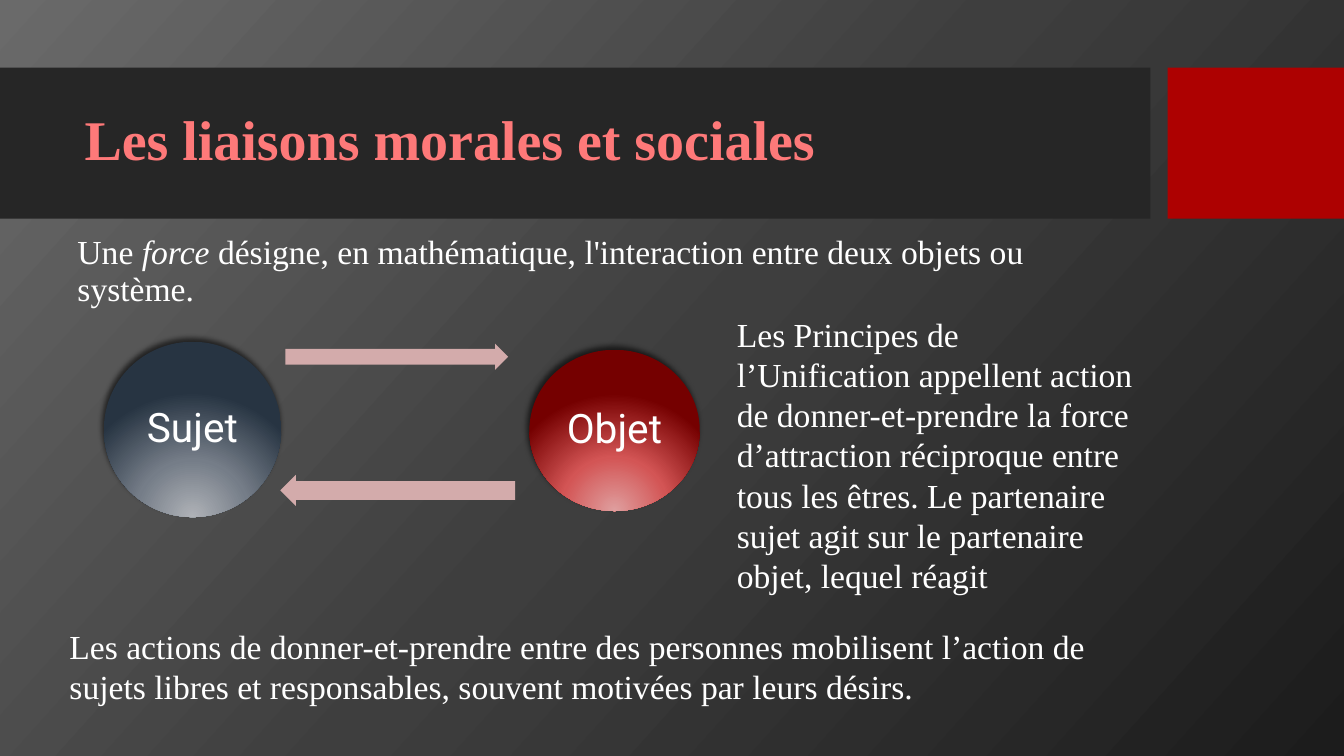
from lxml import etree
from pptx import Presentation
from pptx import util as u
from pptx.dml.color import RGBColor
from pptx.enum import shapes, text
from pptx.oxml import parse_xml
from pptx.oxml.ns import nsdecls, qn

SERIF = "Times New Roman"
SANS = "Roboto"
WHITE = "FFFFFF"
DIAGONAL = '<a:lin ang="2520000" scaled="0"/>'
GLOW_FROM_BELOW = ('<a:path path="circle"><a:fillToRect l="50000" t="155000" '
                   'r="50000" b="-55000"/></a:path>')


def color(value):
    return RGBColor.from_string(value)


def set_gradient(parent, stops, direction):
    """Replace the solid fill inside parent by a gradient of (percent, colour) stops."""
    marks = "".join(f'<a:gs pos="{place * 1000}"><a:srgbClr val="{value}"/></a:gs>'
                    for place, value in stops)
    gradient = parse_xml(f'<a:gradFill {nsdecls("a")} rotWithShape="1">'
                         f'<a:gsLst>{marks}</a:gsLst>{direction}</a:gradFill>')
    parent.replace(parent.find(qn("a:solidFill")), gradient)


class SlideBuilder:
    def __init__(self, page):
        self.page = page

    def background(self, stops):
        self.page.background.fill.solid()
        set_gradient(self.page.element.xpath("p:cSld/p:bg/p:bgPr")[0], stops, DIAGONAL)

    def shape(self, kind, left, top, width, height, fill):
        box = self.page.shapes.add_shape(
            kind, *map(u.Inches, (left, top, width, height)))
        box.shadow.inherit = False
        box.fill.solid()
        box.fill.fore_color.rgb = color(fill)
        box.line.fill.background()
        return box

    def arrow(self, left, top, width, height, rotation=0):
        arrow = self.shape(shapes.MSO_SHAPE.RIGHT_ARROW, left, top, width, height, "D3ABAB")
        arrow.adjustments[0] = 0.6
        arrow.adjustments[1] = 0.5
        arrow.rotation = rotation

    def ball(self, label, left, top, width, height, colors):
        """Shaded circle with a soft shadow and a centred label."""
        ball = self.shape(shapes.MSO_SHAPE.OVAL, left, top, width, height, colors[-1])
        properties = ball.element.spPr
        set_gradient(properties, zip((0, 46, 100), colors), GLOW_FROM_BELOW)
        shadow = etree.SubElement(properties.find(qn("a:effectLst")), qn("a:outerShdw"),
                                  blurRad=str(u.Pt(4)), dist=str(u.Pt(3)),
                                  dir="14700000", rotWithShape="0")
        shade = etree.SubElement(shadow, qn("a:srgbClr"), val="000000")
        etree.SubElement(shade, qn("a:alpha"), val="60000")
        frame = ball.text_frame
        frame.margin_left = frame.margin_right = u.Inches(0.04)
        frame.margin_top = frame.margin_bottom = u.Inches(0.04)
        frame.vertical_anchor = text.MSO_ANCHOR.MIDDLE
        self.fill_frame(frame, [label], 29, SANS, spacing=0.9)
        frame.paragraphs[0].alignment = text.PP_ALIGN.CENTER

    def text(self, pieces, left, top, width, height, size=24, ink=WHITE, spacing=1.0):
        box = self.page.shapes.add_textbox(*map(u.Inches, (left, top, width, height)))
        self.fill_frame(box.text_frame, pieces, size, SERIF, ink, spacing)
        return box.text_frame

    def fill_frame(self, frame, pieces, size, font, ink=WHITE, spacing=1.0):
        frame.word_wrap = True
        para = frame.paragraphs[0]
        para.line_spacing = spacing
        for piece in pieces:
            span = para.add_run()
            span.text = piece
            span.font.size = u.Pt(size)
            span.font.name = font
            span.font.color.rgb = color(ink)


def main():
    deck = Presentation()
    deck.slide_width, deck.slide_height = u.Inches(13.33), u.Inches(7.5)
    page = deck.slides.add_slide(deck.slide_layouts[6])
    builder = SlideBuilder(page)
    builder.background([(0, "6A6A6A"), (50, "3E3E3E"), (100, "1C1C1C")])

    rectangle = shapes.MSO_SHAPE.RECTANGLE
    builder.shape(rectangle, 0, 0.67, 11.41, 1.5, "262626")
    builder.shape(rectangle, 11.58, 0.67, 1.75, 1.5, "AD0101")

    title = builder.text(["Les liaisons morales et sociales"],
                         0.74, 0.82, 10.51, 1.18, 40, "FE7979", 0.9)
    title.vertical_anchor = text.MSO_ANCHOR.MIDDLE
    title.paragraphs[0].runs[0].font.bold = True

    definition = builder.text(
        ["Une ", "force",
         " désigne, en mathématique, l'interaction entre deux objets ou système."],
        0.67, 2.29, 10.8, 1.54, spacing=0.9)
    definition.paragraphs[0].runs[1].font.italic = True

    builder.ball("Objet", 5.25, 3.47, 1.69, 1.6, ("DF9F9F", "D35555", "750000"))
    builder.arrow(2.83, 3.41, 2.21, 0.26)
    builder.ball("Sujet", 1.03, 3.39, 1.76, 1.74, ("AFB2B7", "757D88", "273442"))
    builder.arrow(2.78, 4.71, 2.33, 0.31, rotation=180)

    builder.text(["Les Principes de l’Unification appellent action de donner-et-prendre "
                  "la force d’attraction réciproque entre tous les êtres. Le partenaire "
                  "sujet agit sur le partenaire objet, lequel réagit"],
                 7.21, 3.06, 4.18, 2.52)
    builder.text(["Les actions de donner-et-prendre entre des personnes mobilisent "
                  "l’action de sujets libres et responsables, souvent motivées par "
                  "leurs désirs."], 0.59, 6.16, 10.81, 0.91)
    deck.save("out.pptx")


if __name__ == "__main__":
    main()
